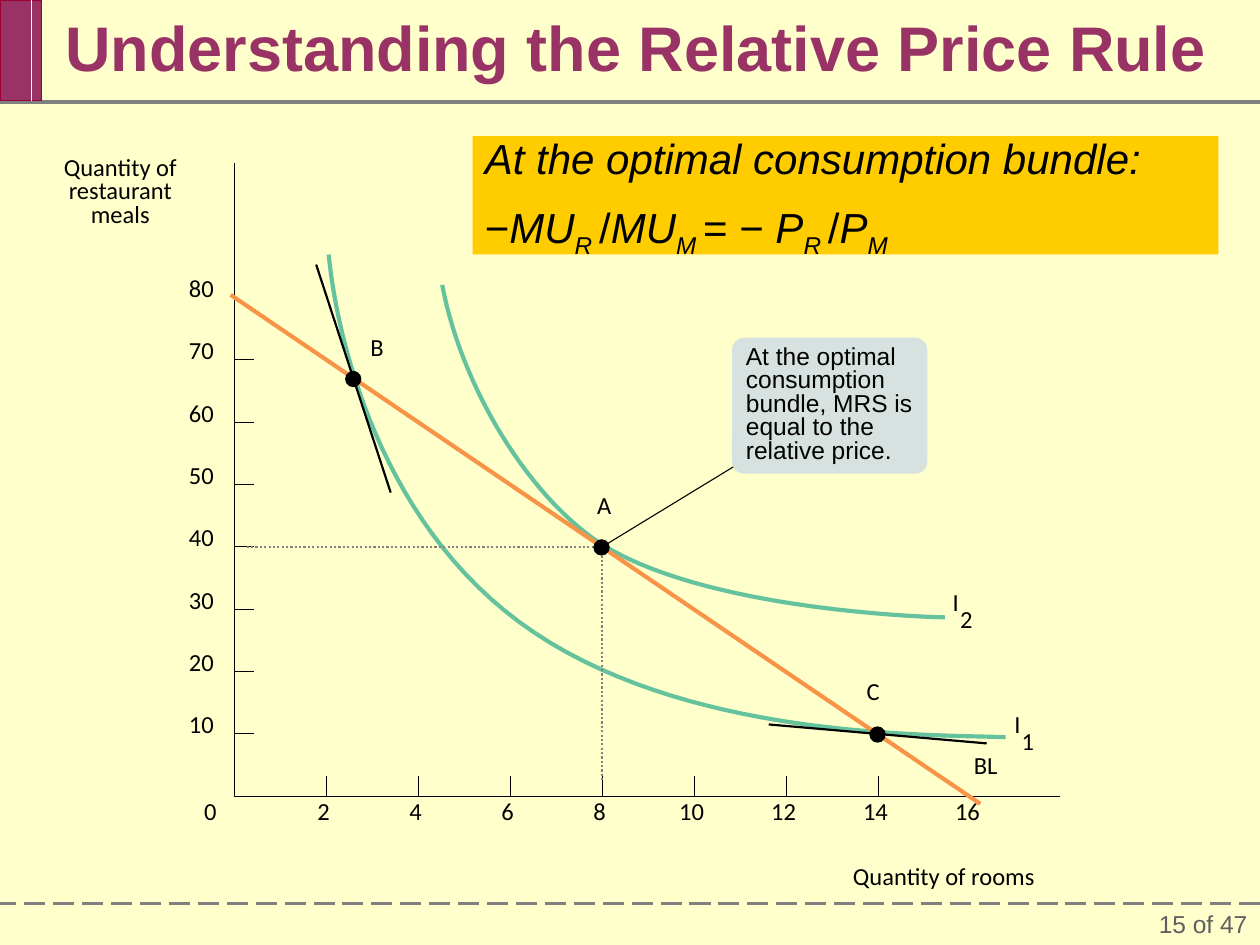
from dataclasses import dataclass

from lxml.etree import SubElement
from pptx import Presentation
from pptx.dml.color import RGBColor
from pptx.enum.dml import MSO_LINE
from pptx.enum.shapes import MSO_CONNECTOR, MSO_SHAPE
from pptx.enum.text import MSO_ANCHOR, PP_ALIGN
from pptx.oxml.ns import qn
from pptx.util import Inches, Pt


@dataclass(frozen=True)
class Theme:
    background: str = "FFFFCC"
    plum: str = "993366"
    plum_edge: str = "990033"
    gray: str = "808080"
    footer: str = "5F5F5F"
    ink: str = "000000"
    curve: str = "64C29C"
    budget: str = "F79448"
    callout: str = "D7E2E0"
    rule: str = "FFCC00"
    heading_font: str = "Arial"
    label_font: str = "Calibri"
    title_size: float = 36
    rule_size: float = 24
    label_size: float = 14
    hairline: float = 0.63
    tangent: float = 1.25
    thick: float = 2.38


THEME = Theme()


@dataclass(frozen=True)
class Box:
    left: float
    top: float
    width: float
    height: float

    @property
    def right(self):
        return self.left + self.width

    @property
    def bottom(self):
        return self.top + self.height

    def lengths(self):
        return [Inches(v) for v in (self.left, self.top, self.width, self.height)]


@dataclass(frozen=True)
class Plot(Box):
    """Plot area that turns rooms and meals into slide positions."""

    def at(self, rooms, meals):
        return self.left + 0.365 * rooms, self.bottom - 0.0495 * meals


def rgb(value):
    return RGBColor.from_string(value)


def add_line(slide, start, end, color, width, dash=None):
    line = slide.shapes.add_connector(
        MSO_CONNECTOR.STRAIGHT, *(Inches(v) for v in (*start, *end)))
    line.line.color.rgb = rgb(color)
    line.line.width = Pt(width)
    if dash:
        line.line.dash_style = dash
    SubElement(line._element.spPr, qn("a:effectLst"))


def add_shape(slide, kind, box, fill, edge=None):
    shape = slide.shapes.add_shape(kind, *box.lengths())
    shape.shadow.inherit = False
    shape.fill.solid()
    shape.fill.fore_color.rgb = rgb(fill)
    if edge:
        shape.line.color.rgb = rgb(edge)
        shape.line.width = Pt(0.75)
    else:
        shape.line.fill.background()
    return shape


def style(paragraph, size, font, color=THEME.ink, spacing=0.8, align=PP_ALIGN.LEFT):
    paragraph.font.size = Pt(size)
    paragraph.font.name = font
    paragraph.font.color.rgb = rgb(color)
    paragraph.line_spacing = spacing
    paragraph.alignment = align


def add_label(slide, text, box, font=THEME.label_font, wrap=False, align=PP_ALIGN.LEFT):
    frame = slide.shapes.add_textbox(*box.lengths()).text_frame
    frame.margin_left = frame.margin_right = frame.margin_top = frame.margin_bottom = 0
    frame.word_wrap = wrap
    frame.text = text
    style(frame.paragraphs[0], THEME.label_size, font, align=align)


def add_outline(slide, points, color, width):
    start, *rest = [(Inches(x), Inches(y)) for x, y in points]
    builder = slide.shapes.build_freeform(*start)
    builder.add_line_segments(rest, close=False)
    shape = builder.convert_to_shape()
    shape.shadow.inherit = False
    shape.fill.background()
    shape.line.color.rgb = rgb(color)
    shape.line.width = Pt(width)


def bezier_points(controls, steps=30):
    """Points along a chain of cubic curves that share their end points."""
    points = [controls[0]]
    for first in range(0, len(controls) - 1, 3):
        segment = controls[first:first + 4]
        for step in range(1, steps + 1):
            t = step / steps
            weights = ((1 - t) ** 3, 3 * t * (1 - t) ** 2, 3 * t * t * (1 - t), t ** 3)
            points.append(tuple(sum(w * p[axis] for w, p in zip(weights, segment))
                                for axis in (0, 1)))
    return points


def add_header(slide, box):
    band = Box(box.left, box.top, 0.33, 0.8)
    add_line(slide, (box.left, box.bottom), (box.right, box.bottom), THEME.gray, 2)
    add_shape(slide, MSO_SHAPE.RECTANGLE, band, THEME.plum, THEME.plum_edge)
    stripe = band.left + 0.25
    add_line(slide, (stripe, band.top), (stripe, band.bottom), THEME.background, 0.75)
    title_box = Box(box.left + 0.42, box.top + 0.08, box.width - 0.42, 0.67)
    frame = add_shape(slide, MSO_SHAPE.RECTANGLE, title_box, THEME.background).text_frame
    frame.text = "Understanding the Relative Price Rule"
    frame.vertical_anchor = MSO_ANCHOR.MIDDLE
    style(frame.paragraphs[0], THEME.title_size, THEME.heading_font, THEME.plum, 0.85)
    frame.paragraphs[0].font.bold = True


def add_footer(slide, box):
    add_line(slide, (box.right, box.top), (box.left, box.top), THEME.gray, 1.5,
             MSO_LINE.LONG_DASH)
    number = Box(box.right - 1.5, box.top, 1.5, box.height)
    frame = slide.shapes.add_textbox(*number.lengths()).text_frame
    frame.word_wrap = True
    frame.vertical_anchor = MSO_ANCHOR.MIDDLE
    frame.text = "15 of 47"
    style(frame.paragraphs[0], THEME.label_size, THEME.heading_font, THEME.footer, 1,
          PP_ALIGN.RIGHT)


def add_rule(slide, box):
    frame = add_shape(slide, MSO_SHAPE.RECTANGLE, box, THEME.rule).text_frame
    frame.word_wrap = True
    frame.vertical_anchor = MSO_ANCHOR.TOP
    frame.text = "At the optimal consumption bundle:"
    frame.paragraphs[0].font.italic = True
    formula = frame.add_paragraph()
    formula.space_before = Pt(14)
    for text, kind in (("−", ""), ("MU", "i"), ("R ", "sub"), ("/", ""), ("MU", "i"),
                       ("M ", "sub"), ("= − ", ""), ("P", "i"), ("R ", "sub"),
                       ("/", ""), ("P", "i"), ("M", "sub")):
        run = formula.add_run()
        run.text = text
        run.font.italic = kind != ""
        if kind == "sub":
            run.font._element.set("baseline", "-25000")
    for paragraph in frame.paragraphs:
        style(paragraph, THEME.rule_size, THEME.heading_font)


def add_callout(slide, box):
    shape = add_shape(slide, MSO_SHAPE.ROUNDED_RECTANGLE, box, THEME.callout)
    shape.adjustments[0] = 0.09
    text_box = Box(box.left + 0.11, box.top + 0.07, box.width - 0.11, 0.93)
    add_label(slide, "At the optimal consumption bundle, MRS is equal to the relative price.",
              text_box, THEME.heading_font, wrap=True)


def add_axes(slide, plot):
    add_outline(slide, [(plot.right, plot.bottom), (plot.left, plot.bottom),
                        (plot.left, plot.top)], THEME.ink, THEME.hairline)
    for rooms in range(0, 17, 2):
        x, y = plot.at(rooms, 0)
        if 0 < rooms < 16:
            add_line(slide, (x, y - 0.16), (x, y), THEME.ink, THEME.hairline)
        width = 0.1 * len(str(rooms))
        left = x - 0.02 - width / 2 if rooms else x - 0.24
        add_label(slide, str(rooms), Box(left, y + 0.04, width, 0.19))
    for meals in range(10, 81, 10):
        x, y = plot.at(0, meals)
        if meals < 80:
            add_line(slide, (x, y), (x + 0.16, y), THEME.ink, THEME.hairline)
        add_label(slide, str(meals), Box(x - 0.36, y - 0.15, 0.2, 0.19))
    add_label(slide, "Quantity of rooms", Box(plot.left + 4.91, plot.bottom + 0.56, 1.47, 0.19))
    add_label(slide, "Quantity of restaurant meals",
              Box(plot.left - 1.53, plot.top - 0.04, 1.25, 0.56), wrap=True,
              align=PP_ALIGN.CENTER)


def add_curves(slide, plot):
    optimum = (8, 40)
    # Indifference curves I2 and I1
    for controls in (
            [(4.52, 82), (4.96, 64.65), (6.58, 45.86), (8.27, 39.19), (10.77, 29.29),
             (15.45, 28.69), (15.45, 28.69)],
            [(16.77, 9.49), (14.9, 9.9), (9.92, 9.49), (6.52, 26.26), (3.12, 43.03),
             (2.22, 74.14), (2.05, 86.87)]):
        add_outline(slide, [plot.at(*p) for p in bezier_points(controls)],
                    THEME.curve, THEME.thick)
    # Budget line, tangents, callout leader and guides to the optimum
    for start, end, color, width, dash in (
            ((-0.08, 80.4), (16.22, -1.21), THEME.budget, THEME.thick, None),
            ((11.62, 11.52), (16.36, 8.48), THEME.ink, THEME.tangent, None),
            ((1.78, 85.25), (3.4, 48.69), THEME.ink, THEME.tangent, None),
            (optimum, (11.1, 53.94), THEME.ink, THEME.hairline, None),
            ((0.27, 40), optimum, THEME.gray, THEME.tangent, MSO_LINE.ROUND_DOT),
            (optimum, (8, 2.4), THEME.gray, THEME.tangent, MSO_LINE.ROUND_DOT)):
        add_line(slide, plot.at(*start), plot.at(*end), color, width, dash)
    # Bundles A, B and C
    for bundle in (optimum, (2.6, 67), (14, 10)):
        x, y = plot.at(*bundle)
        add_shape(slide, MSO_SHAPE.OVAL, Box(x - 0.07, y - 0.06, 0.13, 0.13), THEME.ink)
    for text, rooms, meals in (("A", 7.89, 48.28), ("B", 2.96, 73.54), ("C", 13.75, 18.38),
                               ("I", 15.62, 32.73), ("2", 15.78, 29.9), ("I", 16.96, 13.13),
                               ("1", 17.12, 10.3), ("BL", 16.08, 6.46)):
        width = 0.05 if text == "I" else 0.1 * len(text)
        add_label(slide, text, Box(*plot.at(rooms, meals), width, 0.19))


def main():
    presentation = Presentation()
    presentation.slide_width, presentation.slide_height = Inches(10), Inches(7.5)
    slide = presentation.slides.add_slide(presentation.slide_layouts[6])
    slide.background.fill.solid()
    slide.background.fill.fore_color.rgb = rgb(THEME.background)
    plot = Plot(1.86, 1.29, 6.55, 5.03)
    add_footer(slide, Box(0, 7.17, 10, 0.33))
    add_header(slide, Box(0, 0, 10, 0.81))
    add_axes(slide, plot)
    add_curves(slide, plot)
    add_callout(slide, Box(5.81, 2.68, 1.55, 1.08))
    add_rule(slide, Box(3.75, 1.08, 5.92, 0.94))
    presentation.save("out.pptx")


if __name__ == "__main__":
    main()
